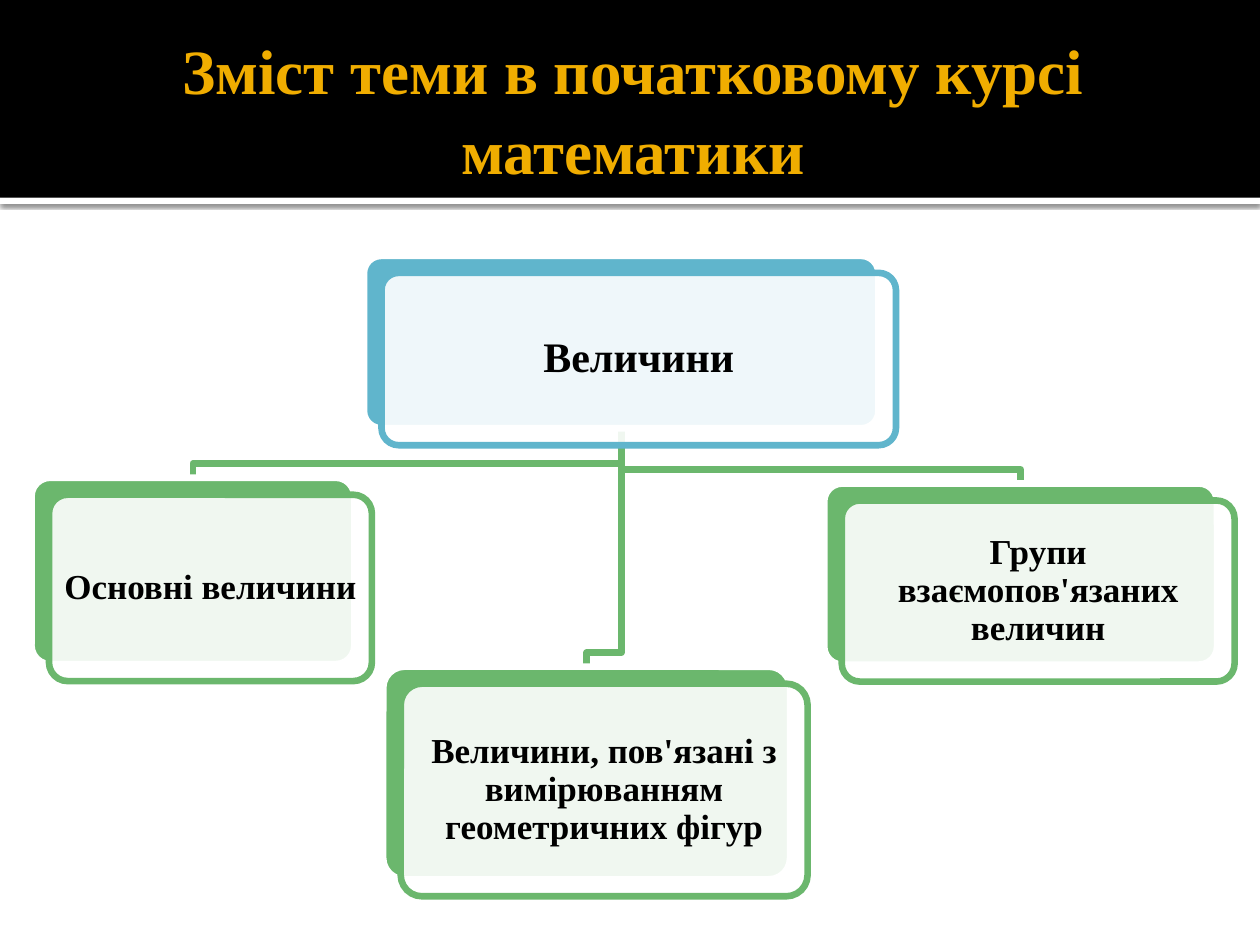
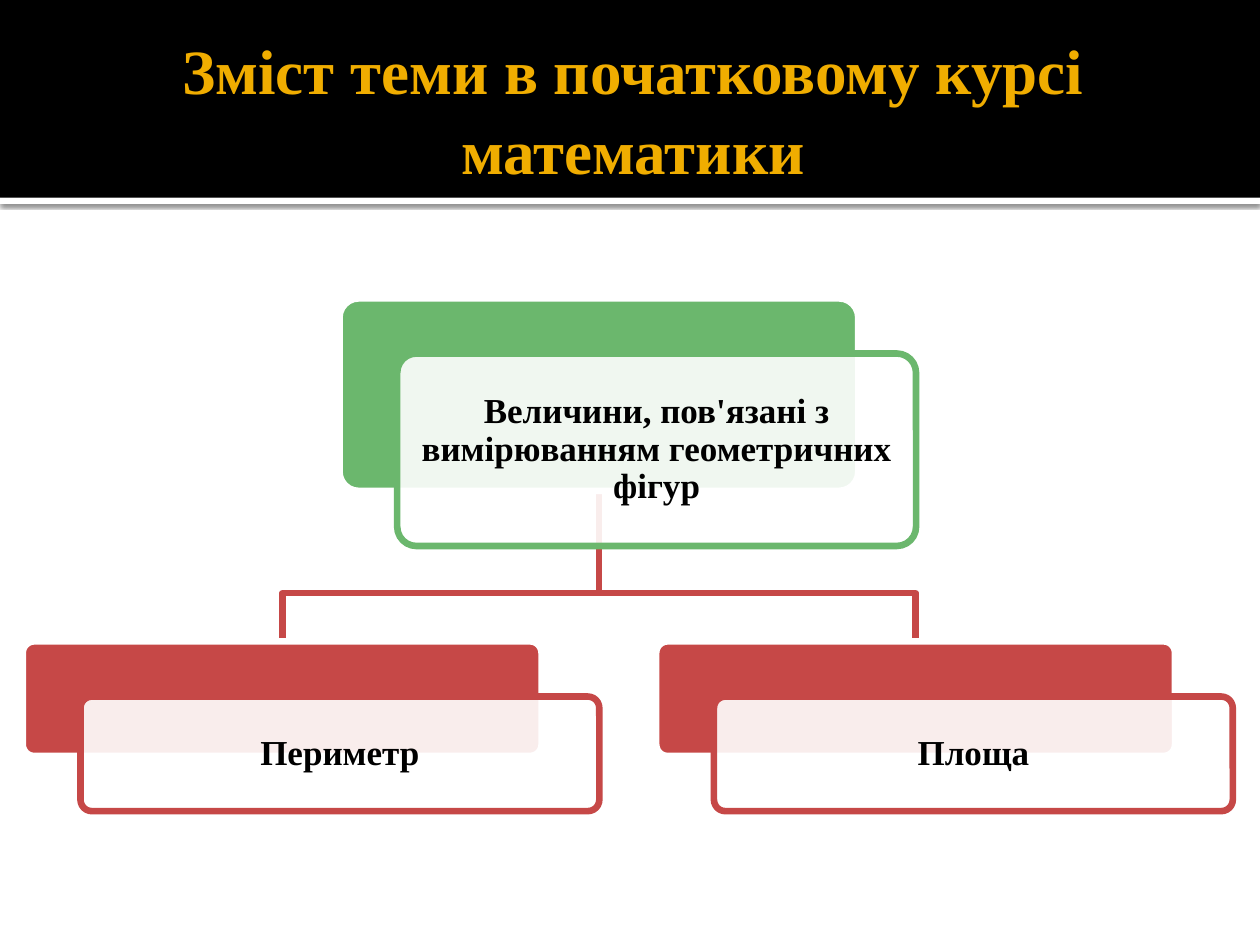
from lxml import etree
from pptx import Presentation
from pptx.dml.color import RGBColor
from pptx.enum.shapes import MSO_SHAPE
from pptx.enum.text import MSO_ANCHOR, PP_ALIGN
from pptx.oxml import parse_xml
from pptx.oxml.ns import nsdecls, qn
from pptx.util import Pt

RECT, ROUNDED = MSO_SHAPE.RECTANGLE, MSO_SHAPE.ROUNDED_RECTANGLE
MIDDLE, CENTER = MSO_ANCHOR.MIDDLE, PP_ALIGN.CENTER

BLACK = RGBColor(0x00, 0x00, 0x00)
WHITE = RGBColor(0xFF, 0xFF, 0xFF)
GOLD = RGBColor(0xF0, 0xAD, 0x00)
BLUE = RGBColor(0x60, 0xB5, 0xCC)
GREEN = RGBColor(0x6B, 0xB7, 0x6D)
RED = RGBColor(0xC6, 0x48, 0x47)

FONT = "Times New Roman"
TITLE = "Зміст теми в початковому курсі математики"
GEOMETRIC = "Величини, пов'язані з вимірюванням геометричних фігур"
SLIDE_WIDTH, BAND_HEIGHT = 720, 113
LINE_WIDTH = Pt(3.78)
RULE_SHADOW = (
    f'<a:effectLst {nsdecls("a")}><a:outerShdw blurRad="{Pt(2.5)}" dist="{Pt(0.8)}" '
    'dir="5400000" algn="tl" rotWithShape="0"><a:srgbClr val="000000">'
    '<a:alpha val="60000"/></a:srgbClr></a:outerShdw></a:effectLst>')

# A card is (text, left, top, width, height); the first one is the root.
# "offset" moves the front plate, "drop" is the last leg of a branch.
CHARTS = [
    {"colors": (BLUE, GREEN), "offset": (10, 9.7), "drop": 8, "root_size": 24,
     "cards": [("Величини", 208, 146.2, 294, 98.5),
               ("Основні величини", 18, 273, 184.5, 106.5),
               (GEOMETRIC, 219, 381, 232.5, 121.5),
               ("Групи взаємопов'язаних величин", 471, 276.3, 224.5, 103.5)]},
    {"colors": (GREEN, RED), "offset": (33, 31.5), "drop": 27.5, "root_size": 20,
     "cards": [(GEOMETRIC, 194, 170.5, 296.5, 110),
               ("Периметр", 13, 366.5, 296.5, 65.5),
               ("Площа", 375, 366.5, 296.5, 65.5)]},
]


def add_plate(slide, kind, left, top, width, height, fill, line=None):
    plate = slide.shapes.add_shape(kind, Pt(left), Pt(top), Pt(width), Pt(height))
    plate.shadow.inherit = False
    plate.fill.solid()
    plate.fill.fore_color.rgb = fill
    if kind == ROUNDED:
        plate.adjustments[0] = 0.1
    if line is None:
        plate.line.fill.background()
    else:
        plate.line.color.rgb = line
        plate.line.width = LINE_WIDTH
    return plate


def write_centred(shape, text, size, color, spacing, insets):
    """Insets are left, top, right and bottom, in points."""
    frame = shape.text_frame
    frame.word_wrap = True
    frame.vertical_anchor = MIDDLE
    (frame.margin_left, frame.margin_top,
     frame.margin_right, frame.margin_bottom) = [Pt(inset) for inset in insets]
    frame.text = text
    paragraph = frame.paragraphs[0]
    paragraph.alignment = CENTER
    paragraph.line_spacing = spacing
    font = paragraph.runs[0].font
    font.name, font.size, font.bold = FONT, Pt(size), True
    font.color.rgb = color


prs = Presentation()
prs.slide_width, prs.slide_height = Pt(SLIDE_WIDTH), Pt(540)

for chart in CHARTS:
    slide = prs.slides.add_slide(prs.slide_layouts[6])

    # Header
    rule = add_plate(slide, RECT, 0, BAND_HEIGHT, SLIDE_WIDTH, 3.6, WHITE)
    properties = rule._element.spPr
    properties.replace(properties.find(qn("a:effectLst")), parse_xml(RULE_SHADOW))
    add_plate(slide, RECT, 0, 0, SLIDE_WIDTH, BAND_HEIGHT, BLACK)
    title = slide.shapes.add_textbox(Pt(36), Pt(12.2), Pt(648), Pt(98.6))
    write_centred(title, TITLE, 36, GOLD, 1.05, (7.2, 3.6, 3.6, 3.6))

    root_color, child_color = chart["colors"]
    root, *children = chart["cards"]
    _, root_left, root_top, root_width, root_height = root
    stem_x, stem_y = root_left + root_width / 2, root_top + root_height

    # Branches, behind the cards
    for _, left, top, width, _ in reversed(children):
        child_x, bend_y = left + width / 2, top - chart["drop"]
        outline = slide.shapes.build_freeform(Pt(stem_x), Pt(stem_y))
        outline.add_line_segments(
            [(Pt(x), Pt(y)) for x, y in
             ((stem_x, bend_y), (child_x, bend_y), (child_x, top))], close=False)
        branch = outline.convert_to_shape()
        branch.shadow.inherit = False
        branch.fill.background()
        branch.line.color.rgb = child_color
        branch.line.width = LINE_WIDTH

    # Cards: a solid back plate and a translucent front plate with the text
    shift_x, shift_y = chart["offset"]
    for card in chart["cards"]:
        text, left, top, width, height = card
        color, size = (root_color, chart["root_size"]) if card is root else (child_color, 20)
        add_plate(slide, ROUNDED, left, top, width, height, color, WHITE)
        front = add_plate(slide, ROUNDED, left + shift_x, top + shift_y,
                          width, height, WHITE, color)
        white = front._element.spPr.find(qn("a:solidFill"))[0]
        etree.SubElement(white, qn("a:alpha"), val="90000")
        write_centred(front, text, size, BLACK, 0.9, [4] * 4)

prs.save("out.pptx")
